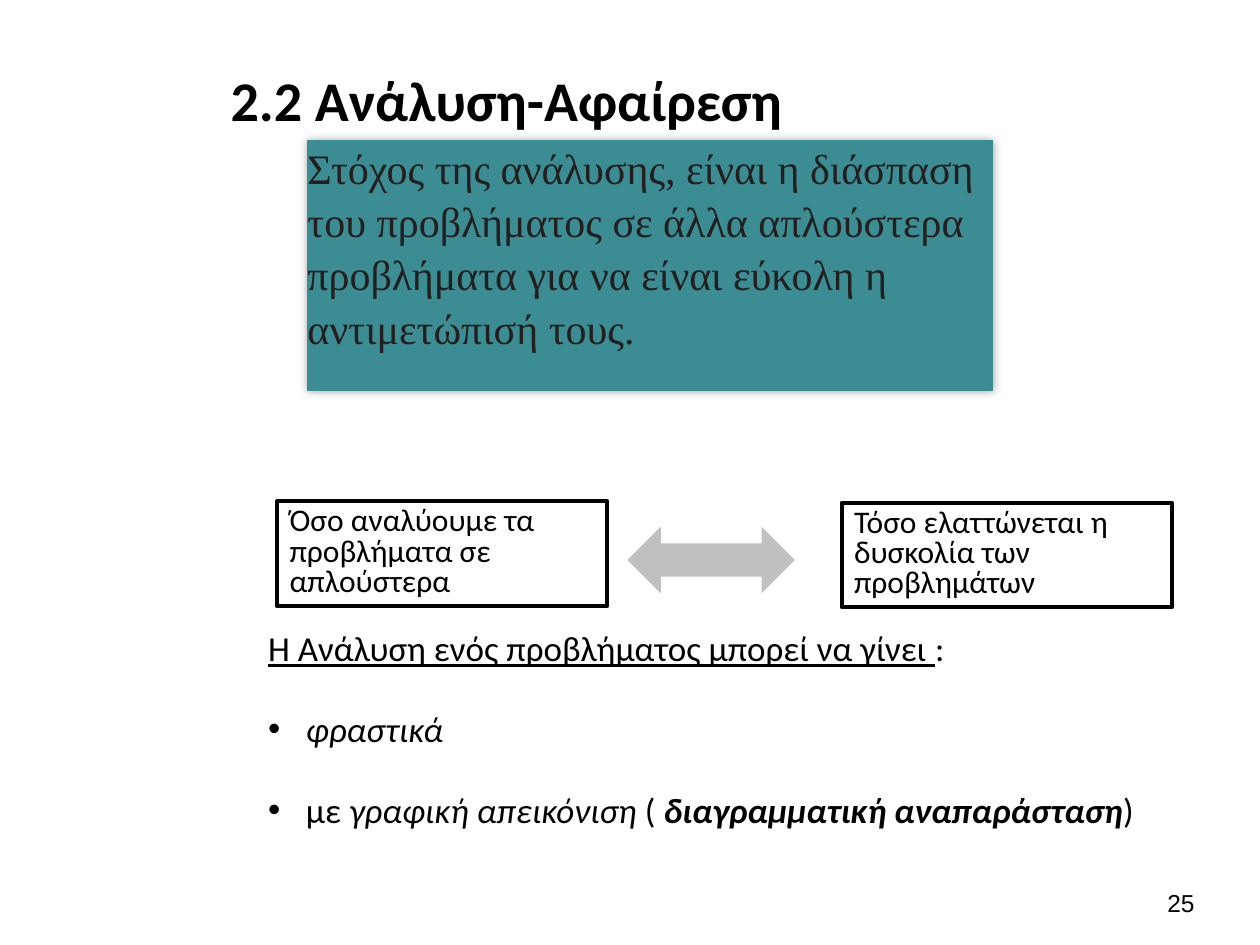
from dataclasses import dataclass

from lxml import etree
from pptx import Presentation
from pptx.dml.color import RGBColor
from pptx.enum.shapes import MSO_SHAPE
from pptx.enum.text import MSO_ANCHOR, PP_ALIGN
from pptx.oxml import parse_xml
from pptx.oxml.ns import nsdecls, qn
from pptx.util import Inches, Pt

RECTANGLE = MSO_SHAPE.RECTANGLE
DOUBLE_ARROW = MSO_SHAPE.LEFT_RIGHT_ARROW
TOP, MIDDLE = MSO_ANCHOR.TOP, MSO_ANCHOR.MIDDLE
LEFT, RIGHT = PP_ALIGN.LEFT, PP_ALIGN.RIGHT


@dataclass(frozen=True)
class Theme:
    black: RGBColor = RGBColor(0, 0, 0)
    white: RGBColor = RGBColor(255, 255, 255)
    arrow: RGBColor = RGBColor(0xC0, 0xC0, 0xC0)
    goal_fill: RGBColor = RGBColor(0x3C, 0x8C, 0x93)
    goal_text: RGBColor = RGBColor(0x23, 0x1F, 0x1F)
    body_font: str = "Calibri"
    goal_font: str = "Times New Roman"
    number_font: str = "Arial"
    title_size: Pt = Pt(32)
    goal_size: Pt = Pt(24)
    list_size: Pt = Pt(20)
    box_size: Pt = Pt(18)
    number_size: Pt = Pt(14)


theme = Theme()


def style(paragraph, size, name=theme.body_font, color=theme.black, spacing=None, align=LEFT):
    paragraph.alignment = align
    paragraph.line_spacing = spacing
    paragraph.font.size = size
    paragraph.font.name = name
    paragraph.font.color.rgb = color


prs = Presentation()
prs.slide_width, prs.slide_height = Inches(10), Inches(7.5)
slide = prs.slides.add_slide(prs.slide_layouts[5])

title = slide.shapes.title
title.left, title.top = Inches(1.73), Inches(0.33)
title.width, title.height = Inches(7.85), Inches(0.92)
title.text_frame.text = "2.2 Ανάλυση-Αφαίρεση"
title.text_frame.vertical_anchor = MIDDLE
style(title.text_frame.paragraphs[0], theme.title_size)
title.text_frame.paragraphs[0].font.bold = True

page_number = slide.shapes.add_textbox(Inches(8.08), Inches(7), Inches(1.5), Inches(0.5))
page_number.text_frame.word_wrap = True
page_number.text_frame.text = "25"
style(page_number.text_frame.paragraphs[0], theme.number_size, theme.number_font, align=RIGHT)

for left, top, statement in (
    (2.2, 3.98, "Όσο αναλύουμε τα προβλήματα σε απλούστερα"),
    (6.68, 3.99, "Τόσο ελαττώνεται η δυσκολία των προβλημάτων"),
):
    box = slide.shapes.add_shape(RECTANGLE, Inches(left), Inches(top), Inches(2.62), Inches(0.83))
    box.shadow.inherit = False
    box.fill.solid()
    box.fill.fore_color.rgb = theme.white
    box.line.color.rgb = theme.black
    box.line.width = Pt(2.25)
    box.text_frame.word_wrap = True
    box.text_frame.vertical_anchor = TOP
    box.text_frame.text = statement
    style(box.text_frame.paragraphs[0], theme.box_size, spacing=0.8)

relation = slide.shapes.add_shape(
    DOUBLE_ARROW, Inches(4.98), Inches(4.18), Inches(1.33), Inches(0.53)
)
relation.shadow.inherit = False
relation.fill.solid()
relation.fill.fore_color.rgb = theme.arrow
relation.line.fill.background()

ways = slide.shapes.add_textbox(Inches(2.03), Inches(4.99), Inches(7.63), Inches(1.72))
ways.text_frame.word_wrap = True
heading = ways.text_frame.paragraphs[0]
style(heading, theme.list_size, spacing=0.8)
underlined = heading.add_run()
underlined.text = "Η Ανάλυση ενός προβλήματος μπορεί να γίνει "
underlined.font.underline = True
heading.add_run().text = ":"

for pieces in (
    (("φραστικά", False, True),),
    (
        ("με ", False, False),
        ("γραφική απεικόνιση ", False, True),
        ("( ", False, False),
        ("διαγραμματική αναπαράσταση", True, True),
        (")", False, False),
    ),
):
    way = ways.text_frame.add_paragraph()
    properties = way._p.get_or_add_pPr()
    properties.set("marL", str(Inches(0.3)))
    properties.set("indent", str(-Inches(0.3)))
    etree.SubElement(properties, qn("a:buFont"), typeface="Arial")
    etree.SubElement(properties, qn("a:buChar"), char="•")
    style(way, theme.list_size, spacing=0.8)
    way.space_before = Pt(27)
    for wording, bold, italic in pieces:
        piece = way.add_run()
        piece.text = wording
        piece.font.bold, piece.font.italic = bold, italic

goal_table = slide.shapes.add_table(
    1, 1, Inches(2.44), Inches(1.11), Inches(5.44), Inches(1.99)
).table
goal_table.first_row = goal_table.horz_banding = False
goal_table._tbl.tblPr.insert(0, parse_xml(
    f'<a:effectLst {nsdecls("a")}><a:outerShdw blurRad="63500" dist="0">'
    '<a:srgbClr val="000000"><a:alpha val="35000"/></a:srgbClr>'
    '</a:outerShdw></a:effectLst>'
))
goal = goal_table.cell(0, 0)
goal.margin_left = goal.margin_right = goal.margin_top = goal.margin_bottom = 0
goal.fill.solid()
goal.fill.fore_color.rgb = theme.goal_fill
goal.text = (
    "Στόχος της ανάλυσης, είναι η διάσπαση του προβλήματος σε άλλα απλούστερα "
    "προβλήματα για να είναι εύκολη η αντιμετώπισή τους."
)
style(goal.text_frame.paragraphs[0], theme.goal_size, theme.goal_font, theme.goal_text, 1.15)
for side in ("a:lnL", "a:lnR", "a:lnT", "a:lnB"):
    border = etree.Element(qn(side))
    etree.SubElement(border, qn("a:noFill"))
    goal._tc.tcPr.find(qn("a:solidFill")).addprevious(border)

prs.save("out.pptx")
